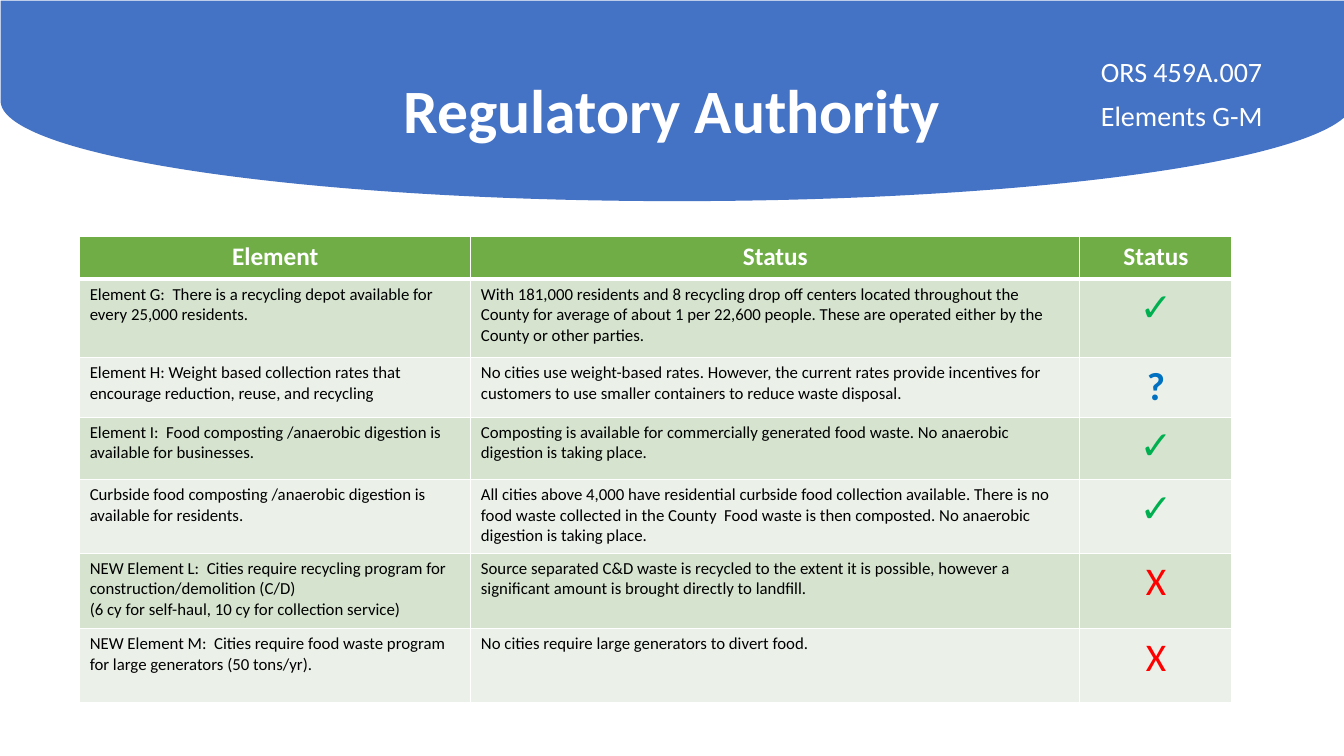
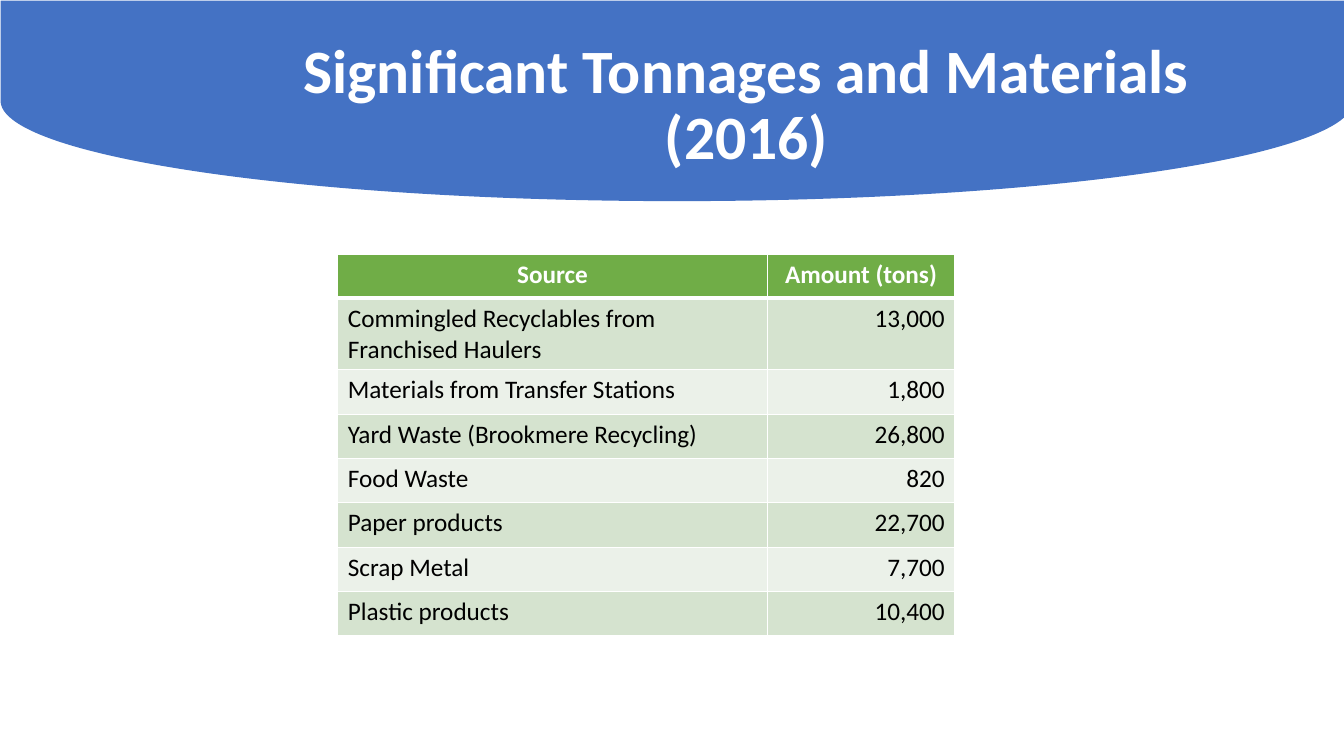
from dataclasses import dataclass
from typing import NamedTuple, Optional

import pptx
import pptx.dml.color
import pptx.enum.shapes
import pptx.enum.text
import pptx.oxml
import pptx.oxml.ns
import pptx.util

Inches = pptx.util.Inches
Pt = pptx.util.Pt
ALIGN = pptx.enum.text.PP_ALIGN
ANCHOR = pptx.enum.text.MSO_ANCHOR


@dataclass(frozen=True)
class Theme:
    font: str = "Calibri"
    band: str = "4472C4"
    header: str = "70AD47"
    rows: tuple = ("D5E3CF", "EBF1E9")
    white: str = "FFFFFF"
    black: str = "000000"
    green: str = "00B050"
    blue: str = "0070C0"
    red: str = "FF0000"
    title: int = 44
    subtitle: int = 20
    table: int = 18
    detail: int = 12
    mark: int = 28
    rule: int = 1
    header_rule: int = 3


T = Theme()


class Box(NamedTuple):
    left: float
    top: float
    width: float
    height: float

    def emu(self) -> tuple:
        return tuple(Inches(v) for v in self)


class Cell(NamedTuple):
    text: str
    size: int = T.table
    color: str = T.black
    bold: bool = False
    align: ALIGN = ALIGN.LEFT


@dataclass(frozen=True)
class Table:
    left: float
    top: float
    cols: tuple
    heights: tuple
    cells: list


def rgb(value: str) -> pptx.dml.color.RGBColor:
    return pptx.dml.color.RGBColor.from_string(value)


def write(tf, text: str, *, size: int, color: str, bold: bool = False,
          align: ALIGN = ALIGN.LEFT, spacing: Optional[float] = None,
          gap: int = 0) -> None:
    """Fill a text frame with one paragraph for each line of text."""
    tf.word_wrap = True
    for i, line in enumerate(text.split("\n")):
        p = tf.add_paragraph() if i else tf.paragraphs[0]
        p.alignment = align
        if spacing:
            p.line_spacing = spacing
        if i and gap:
            p.space_before = Pt(gap)
        r = p.add_run()
        r.text = line
        r.font.name = T.font
        r.font.size = Pt(size)
        r.font.bold = bold
        r.font.color.rgb = rgb(color)


def add_text(slide, box: Box, text: str, *, anchor: ANCHOR = ANCHOR.TOP, **fmt) -> None:
    tf = slide.shapes.add_textbox(*box.emu()).text_frame
    tf.vertical_anchor = anchor
    write(tf, text, spacing=0.9, **fmt)


def add_band(slide) -> None:
    sp = slide.shapes.add_shape(pptx.enum.shapes.MSO_SHAPE.FLOWCHART_DELAY,
                                *Box(5.72, -5.71, 1.99, 13.42).emu())
    sp.rotation = 90
    sp.shadow.inherit = False
    sp.fill.solid()
    sp.fill.fore_color.rgb = rgb(T.band)
    sp.line.fill.background()


def add_titled_slide(prs, title: str, box: Box):
    slide = prs.slides.add_slide(prs.slide_layouts[6])
    add_band(slide)
    add_text(slide, box, title, anchor=ANCHOR.MIDDLE, size=T.title,
             color=T.white, bold=True, align=ALIGN.CENTER)
    return slide


def set_borders(cell, top: int, bottom: int) -> None:
    tc_pr = cell._tc.get_or_add_tcPr()
    sides = {"lnL": T.rule, "lnR": T.rule, "lnT": top, "lnB": bottom}
    for tag, width in sides.items():
        tc_pr.append(pptx.oxml.parse_xml(
            f'<a:{tag} {pptx.oxml.ns.nsdecls("a")} w="{Pt(width)}"><a:solidFill>'
            f'<a:srgbClr val="{T.white}"/></a:solidFill></a:{tag}>'))


def add_table(slide, spec_: Table) -> None:
    box = Box(spec_.left, spec_.top, sum(spec_.cols), sum(spec_.heights))
    table = slide.shapes.add_table(len(spec_.heights), len(spec_.cols), *box.emu()).table
    for col, width in zip(table.columns, spec_.cols):
        col.width = Inches(width)
    for i, (row, height, cells) in enumerate(zip(table.rows, spec_.heights, spec_.cells)):
        row.height = Inches(height)
        for tc, cell in zip(row.cells, cells):
            set_borders(tc, top=T.header_rule if i == 1 else T.rule,
                        bottom=T.header_rule if i == 0 else T.rule)
            tc.fill.solid()
            tc.fill.fore_color.rgb = rgb(T.rows[(i - 1) % 2] if i else T.header)
            write(tc.text_frame, **cell._asdict())


def header(*labels: str) -> list:
    return [Cell(s, color=T.white, bold=True, align=ALIGN.CENTER) for s in labels]


MARKS = {
    mark: Cell(mark, T.mark, color, bold, ALIGN.CENTER)
    for mark, color, bold in (("✓", T.green, True), ("?", T.blue, True), ("X", T.red, False))
}

ELEMENTS = [
    ("Element G:  There is a recycling depot available for every 25,000 residents.",
     "With 181,000 residents and 8 recycling drop off centers located throughout the "
     "County for average of about 1 per 22,600 people. These are operated either by the "
     "County or other parties.", "✓"),
    ("Element H: Weight based collection rates that encourage reduction, reuse, and recycling",
     "No cities use weight-based rates. However, the current rates provide incentives for "
     "customers to use smaller containers to reduce waste disposal.", "?"),
    ("Element I:  Food composting /anaerobic digestion is available for businesses.",
     "Composting is available for commercially generated food waste. No anaerobic "
     "digestion is taking place.", "✓"),
    ("Curbside food composting /anaerobic digestion is available for residents.",
     "All cities above 4,000 have residential curbside food collection available. There is "
     "no food waste collected in the County  Food waste is then composted. No anaerobic "
     "digestion is taking place.", "✓"),
    ("NEW Element L:  Cities require recycling program for construction/demolition (C/D)\n"
     "(6 cy for self-haul, 10 cy for collection service)",
     "Source separated C&D waste is recycled to the extent it is possible, however a "
     "significant amount is brought directly to landfill.", "X"),
    ("NEW Element M:  Cities require food waste program for large generators (50 tons/yr).",
     "No cities require large generators to divert food.", "X"),
]

TONNAGES = [
    ("Commingled Recyclables from Franchised Haulers", 13000),
    ("Materials from Transfer Stations", 1800),
    ("Yard Waste (Brookmere Recycling)", 26800),
    ("Food Waste", 820),
    ("Paper products", 22700),
    ("Scrap Metal", 7700),
    ("Plastic products", 10400),
]


def add_authority_slide(prs) -> None:
    slide = add_titled_slide(prs, "Regulatory Authority", Box(0.92, 0.4, 11.5, 1.45))
    add_text(slide, Box(10.82, 0.53, 2.02, 0.86), "ORS 459A.007\nElements G-M",
             size=T.subtitle, color=T.white, gap=10)
    rows = [[Cell(element, T.detail), Cell(status, T.detail), MARKS[mark]]
            for element, status, mark in ELEMENTS]
    add_table(slide, Table(0.79, 2.35, (3.88, 6.04, 1.51),
                           (0.42, 0.78, 0.59, 0.62, 0.73, 0.75, 0.73),
                           [header("Element", "Status", "Status"), *rows]))


def add_tonnage_slide(prs) -> None:
    slide = add_titled_slide(prs, "Significant Tonnages and Materials (2016)",
                             Box(2.38, 0.32, 10.05, 1.47))
    rows = [[Cell(source), Cell(f"{tons:,}", align=ALIGN.RIGHT)] for source, tons in TONNAGES]
    add_table(slide, Table(3.35, 2.52, (4.26, 1.86), (0.44, 0.71) + (0.44,) * 6,
                           [header("Source", "Amount (tons)"), *rows]))


def main() -> None:
    prs = pptx.Presentation()
    prs.slide_width, prs.slide_height = Inches(13.33), Inches(7.5)
    add_authority_slide(prs)
    add_tonnage_slide(prs)
    prs.save("out.pptx")


if __name__ == "__main__":
    main()
